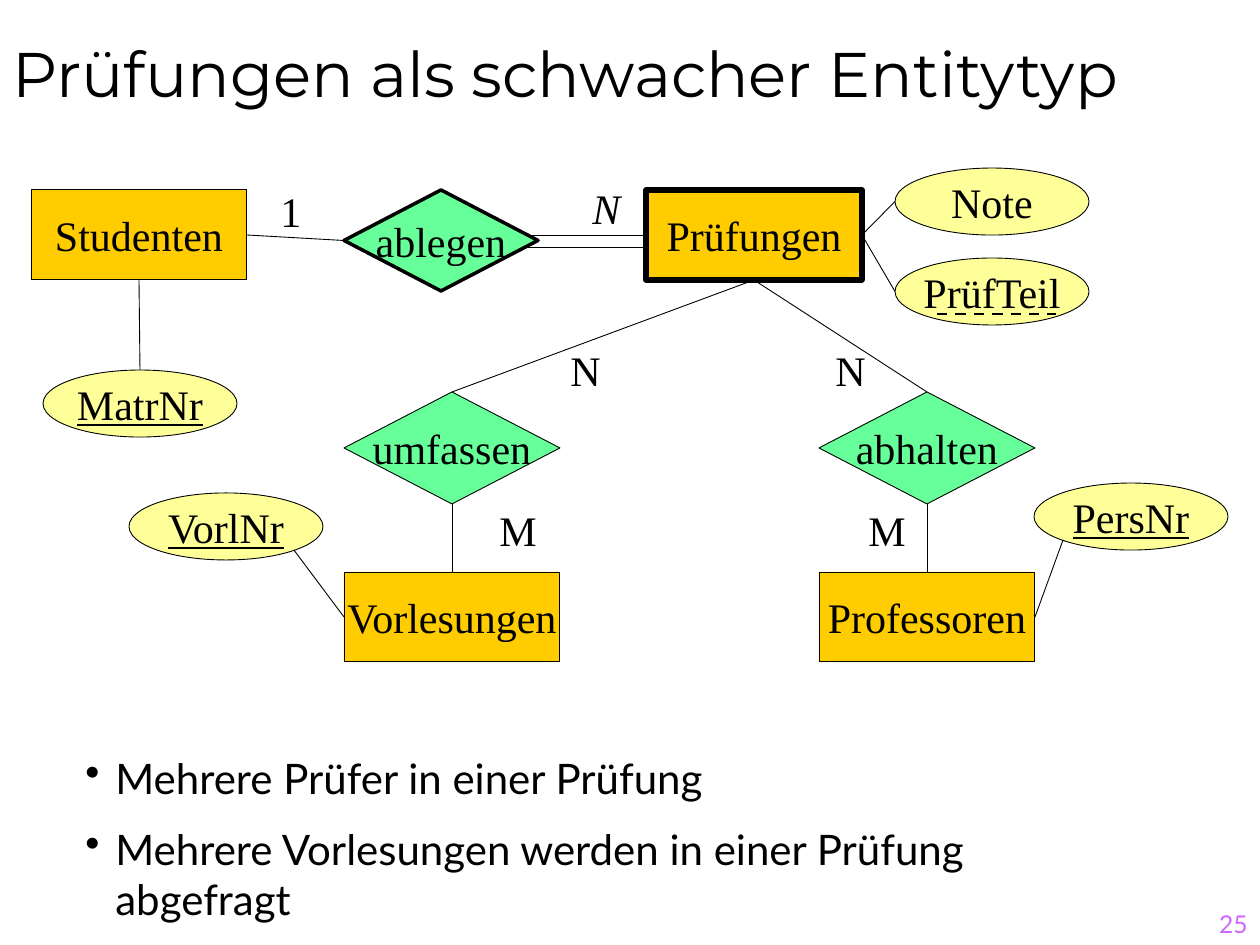
from pptx import Presentation
from pptx.dml.color import RGBColor
from pptx.enum.dml import MSO_LINE_DASH_STYLE as DASH
from pptx.enum.shapes import MSO_CONNECTOR, MSO_SHAPE
from pptx.enum.text import MSO_ANCHOR as ANCHOR, PP_ALIGN as ALIGN
from pptx.oxml.ns import qn
from pptx.util import Emu, Pt
from lxml.etree import SubElement

SCALE = 914400 / 126
COLORS = {
    "ink": "000000",
    "entity": "FFCC00",
    "relation": "66FF99",
    "attribute": "FFFF99",
    "number": "CC66FF",
}
SERIF, SANS, DISPLAY = "Times New Roman", "Lato", "Montserrat"
KINDS = {
    "entity": (MSO_SHAPE.RECTANGLE, 216, 90),
    "relation": (MSO_SHAPE.DIAMOND, 216, 112),
    "attribute": (MSO_SHAPE.OVAL, 194, 67),
}
TOP, LEFT, BOTTOM, RIGHT = (0.5, 0), (0, 0.5), (0.5, 1), (1, 0.5)
LOWER_LEFT, LOWER_RIGHT = (0.15, 0.85), (0.85, 0.85)

NODES = {
    "Studenten": ("entity", 0, 22),
    "ablegen": ("relation", 313, 22),
    "Prüfungen": ("entity", 615, 22),
    "Note": ("attribute", 864, 0),
    "PrüfTeil": ("attribute", 864, 90),
    "MatrNr": ("attribute", 12, 202),
    "umfassen": ("relation", 313, 224),
    "abhalten": ("relation", 788, 224),
    "Vorlesungen": ("entity", 313, 404),
    "Professoren": ("entity", 788, 404),
    "VorlNr": ("attribute", 98, 325),
    "PersNr": ("attribute", 1003, 315),
}
WEAK = {"ablegen": 2, "Prüfungen": 3}
SIZES = {"ablegen": (194, 101)}
KEYS = {"MatrNr", "VorlNr", "PersNr"}
EDGES = [
    ("Studenten", RIGHT, "ablegen", LEFT),
    ("Studenten", BOTTOM, "MatrNr", TOP),
    ("Prüfungen", RIGHT, "Note", LEFT),
    ("Prüfungen", RIGHT, "PrüfTeil", LEFT),
    ("Prüfungen", BOTTOM, "umfassen", TOP),
    ("Prüfungen", BOTTOM, "abhalten", TOP),
    ("umfassen", BOTTOM, "Vorlesungen", TOP),
    ("abhalten", BOTTOM, "Professoren", TOP),
    ("VorlNr", LOWER_RIGHT, "Vorlesungen", LEFT),
    ("PersNr", LOWER_LEFT, "Professoren", RIGHT),
]
LABELS = [
    ("1", 237, 11, False),
    ("N", 548, 8, True),
    ("N", 527, 170, False),
    ("N", 792, 170, False),
    ("M", 456, 330, False),
    ("M", 825, 330, False),
]


def px(*values):
    return [Emu(round(v * SCALE)) for v in values]


def color(name):
    return RGBColor.from_string(COLORS[name])


def add_run(p, text, font, size=24, ink="ink", italic=None, underline=None):
    r = p.add_run()
    r.text = text
    r.font.name, r.font.size = font, Pt(size)
    r.font.italic, r.font.underline = italic, underline
    r.font.color.rgb = color(ink)


def add_box(s, box, anchor=ANCHOR.TOP, wrap=True):
    tf = s.shapes.add_textbox(*px(*box)).text_frame
    tf.word_wrap, tf.vertical_anchor = wrap, anchor
    return tf


def add_line(s, x1, y1, x2, y2, width=0.5, dash=None):
    sp = s.shapes.add_connector(MSO_CONNECTOR.STRAIGHT, *px(x1, y1, x2, y2))
    sp.line.color.rgb, sp.line.width = color("ink"), Pt(width)
    if dash:
        sp.line.dash_style = dash
    SubElement(sp._element.spPr, qn("a:effectLst"))


def add_node(s, name, kind, box):
    sp = s.shapes.add_shape(KINDS[kind][0], *px(*box))
    sp.shadow.inherit = False
    sp.fill.solid()
    sp.fill.fore_color.rgb = color(kind)
    sp.line.color.rgb, sp.line.width = color("ink"), Pt(WEAK.get(name, 0.5))
    tf = sp.text_frame
    tf.word_wrap, tf.vertical_anchor = False, ANCHOR.MIDDLE
    p = tf.paragraphs[0]
    p.alignment = ALIGN.CENTER
    add_run(p, name, SERIF, underline=True if name in KEYS else None)


def add_title(s, box, text):
    tf = add_box(s, box, ANCHOR.BOTTOM)
    add_run(tf.paragraphs[0], text, DISPLAY, 36)


def add_diagram(s, x, y):
    boxes = {}
    for name, (kind, dx, dy) in NODES.items():
        size = SIZES.get(name, KINDS[kind][1:])
        boxes[name] = (x + dx, y + dy, *size)
        add_node(s, name, kind, boxes[name])

    def point(name, anchor):
        left, top, w, h = boxes[name]
        return left + w * anchor[0], top + h * anchor[1]

    for start, a, end, b in EDGES:
        add_line(s, *point(start, a), *point(end, b))
    for dy in (67, 79):
        add_line(s, x + 497, y + dy, x + 615, y + dy)
    add_line(s, x + 906, y + 146, x + 1025, y + 146, 1.5, DASH.DASH)
    for text, dx, dy, italic in LABELS:
        tf = add_box(s, (x + dx, y + dy, 45 if text == "1" else 55, 63), wrap=False)
        p = tf.paragraphs[0]
        p.alignment = ALIGN.CENTER
        add_run(p, text, SERIF, italic=italic)


def add_bullets(s, box, items):
    tf = add_box(s, box)
    indent = px(30)[0]
    for i, text in enumerate(items):
        p = tf.add_paragraph() if i else tf.paragraphs[0]
        p.space_after = Pt(12)
        pPr = p._p.get_or_add_pPr()
        pPr.set("marL", str(indent))
        pPr.set("indent", str(-indent))
        SubElement(pPr, qn("a:buChar"), char="•")
        add_run(p, text, SANS)


def add_page_number(s, box, text):
    p = add_box(s, box, ANCHOR.BOTTOM).paragraphs[0]
    p.alignment = ALIGN.RIGHT
    add_run(p, text, SANS, 14, "number")


def main():
    prs = Presentation()
    prs.slide_width, prs.slide_height = px(1260, 945)
    s = prs.slides.add_slide(prs.slide_layouts[6])
    add_title(s, (0, -42, 1260, 158), "Prüfungen als schwacher Entitytyp")
    add_diagram(s, 31, 168)
    add_bullets(s, (73, 746, 1008, 189), [
        "Mehrere Prüfer in einer Prüfung",
        "Mehrere Vorlesungen werden in einer Prüfung abgefragt",
    ])
    add_page_number(s, (998, 882, 262, 63), "25")
    prs.save("out.pptx")


if __name__ == "__main__":
    main()
